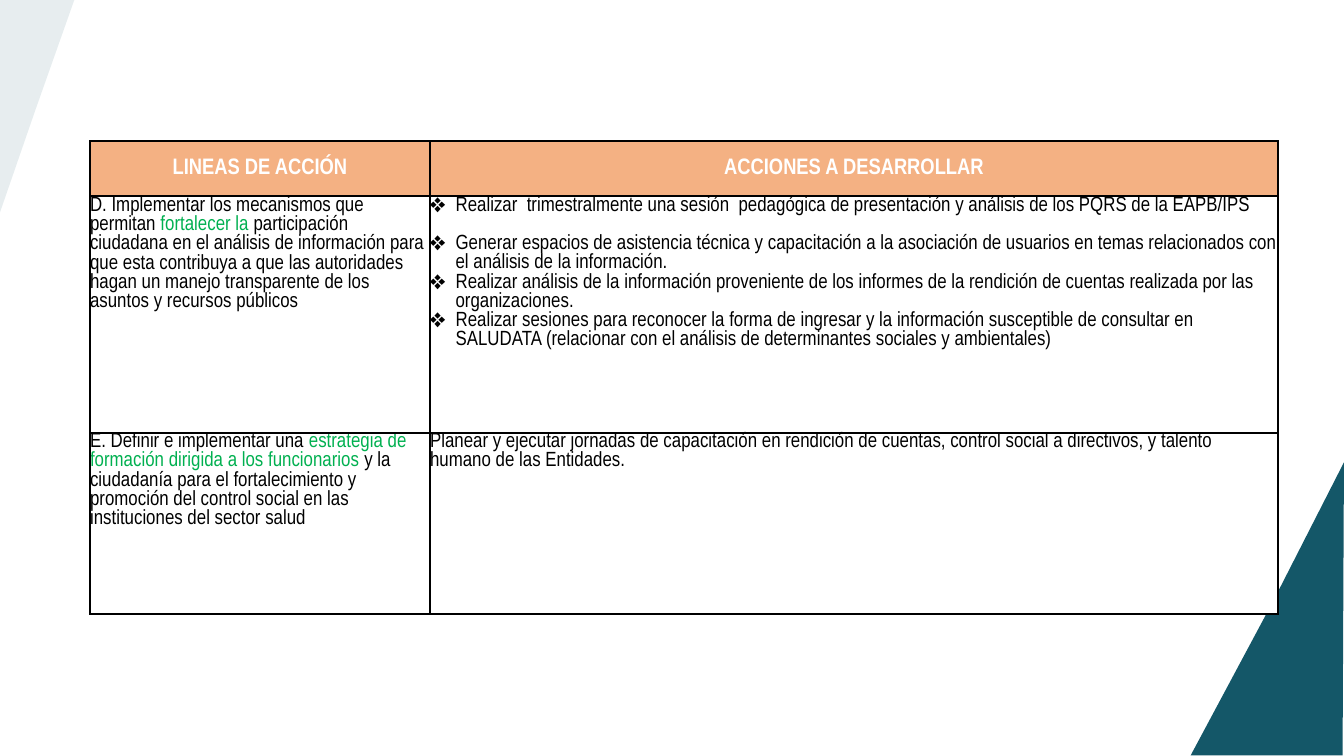
from lxml.etree import SubElement
from pptx import Presentation
from pptx.dml.color import RGBColor
from pptx.enum.text import MSO_ANCHOR, PP_ALIGN
from pptx.oxml import parse_xml
from pptx.oxml.ns import nsdecls, qn
from pptx.util import Inches, Pt

COLORS = {"teal": "145768", "orange": "F4B183", "green": "00B050",
          "black": "000000", "white": "FFFFFF"}
FONT = "Arial Narrow"
INDENT = Inches(0.19)

deck = Presentation()
deck.slide_width = Inches(10)
deck.slide_height = deck.slide_width * 9 // 16
page = deck.slides.add_slide(deck.slide_layouts[6])


def add_span(para, text, size, color, bold=False):
    span = para.add_run()
    span.text = text
    span.font.name = FONT
    span.font.size = Pt(size)
    span.font.bold = bold
    span.font.color.rgb = RGBColor.from_string(COLORS[color])


corners = [
    ([(947, 448), (1000, 344), (999, 562), (886, 562)], 100),
    ([(26, 83), (-1, 161), (-1, -2), (56, -2)], 10),
]
for points, opacity in corners:
    outline = page.shapes.build_freeform(*points[0], scale=Inches(0.01))
    outline.add_line_segments(points[1:], close=True)
    corner = outline.convert_to_shape()
    corner.shadow.inherit = False
    corner.line.fill.background()
    corner.fill.solid()
    corner.fill.fore_color.rgb = RGBColor.from_string(COLORS["teal"])
    if opacity < 100:
        tint = corner.fill._xPr.find(qn("a:solidFill"))[0]
        SubElement(tint, qn("a:alpha")).set("val", str(opacity * 1000))

columns, rows = [2.53, 6.31], [0.41, 1.76, 1.35]
table = page.shapes.add_table(
    len(rows), len(columns), Inches(0.67), Inches(1.05),
    Inches(sum(columns)), Inches(sum(rows))).table
for column, width in zip(table.columns, columns):
    column.width = Inches(width)
for row, height in zip(table.rows, rows):
    row.height = Inches(height)

headings = ["LINEAS DE ACCIÓN", "ACCIONES A DESARROLLAR"]
actions = [
    "Realizar  trimestralmente una sesión  pedagógica de presentación y análisis de los PQRS de la EAPB/IPS",
    "Generar espacios de asistencia técnica y capacitación a la asociación de usuarios en temas relacionados con el análisis de la información.",
    "Realizar análisis de la información proveniente de los informes de la rendición de cuentas realizada por las organizaciones.",
    "Realizar sesiones para reconocer la forma de ingresar y la información susceptible de consultar en SALUDATA (relacionar con el análisis de determinantes sociales y ambientales)",
]
lines = [
    [("D. Implementar los mecanismos que permitan ", "black"),
     ("fortalecer la ", "green"),
     ("participación ciudadana en el análisis de información para que esta contribuya a que las autoridades hagan un manejo transparente de los asuntos y recursos públicos", "black")],
    [("E. Definir e implementar una ", "black"),
     ("estrategia de formación dirigida a los funcionarios ", "green"),
     ("y la ciudadanía para el fortalecimiento y promoción del control social en las instituciones del sector salud", "black")],
]
planning = "Planear y ejecutar jornadas de capacitación en rendición de cuentas, control social a directivos, y talento humano de las Entidades."

for index, cell in enumerate(table.iter_cells()):
    heading = index < len(columns)
    cell.margin_left = cell.margin_right = cell.margin_top = cell.margin_bottom = 0
    cell.vertical_anchor = MSO_ANCHOR.MIDDLE if heading else MSO_ANCHOR.TOP
    cell.fill.solid()
    cell.fill.fore_color.rgb = RGBColor.from_string(COLORS["orange" if heading else "white"])
    for order, side in enumerate(["lnL", "lnR", "lnT", "lnB"]):
        cell._tc.tcPr.insert(order, parse_xml(
            f'<a:{side} {nsdecls("a")} w="{Pt(1)}"><a:solidFill>'
            f'<a:srgbClr val="{COLORS["black"]}"/></a:solidFill></a:{side}>'))

for column, text in enumerate(headings):
    para = table.cell(0, column).text_frame.paragraphs[0]
    para.alignment = PP_ALIGN.CENTER
    add_span(para, text, 12, "white", bold=True)

for row, spans in enumerate(lines, start=1):
    para = table.cell(row, 0).text_frame.paragraphs[0]
    for text, color in spans:
        add_span(para, text, 11, color)

frame = table.cell(1, 1).text_frame
for number, text in enumerate(actions):
    para = frame.add_paragraph() if number else frame.paragraphs[0]
    properties = para._p.get_or_add_pPr()
    properties.set("marL", str(INDENT))
    properties.set("indent", str(-INDENT))
    SubElement(properties, qn("a:buSzPct")).set("val", "130000")
    SubElement(properties, qn("a:buChar")).set("char", "❖")
    if number == 0:
        para.space_after = Pt(10.3)
    add_span(para, text, 11, "black")

add_span(table.cell(2, 1).text_frame.paragraphs[0], planning, 11, "black")

deck.save("out.pptx")
